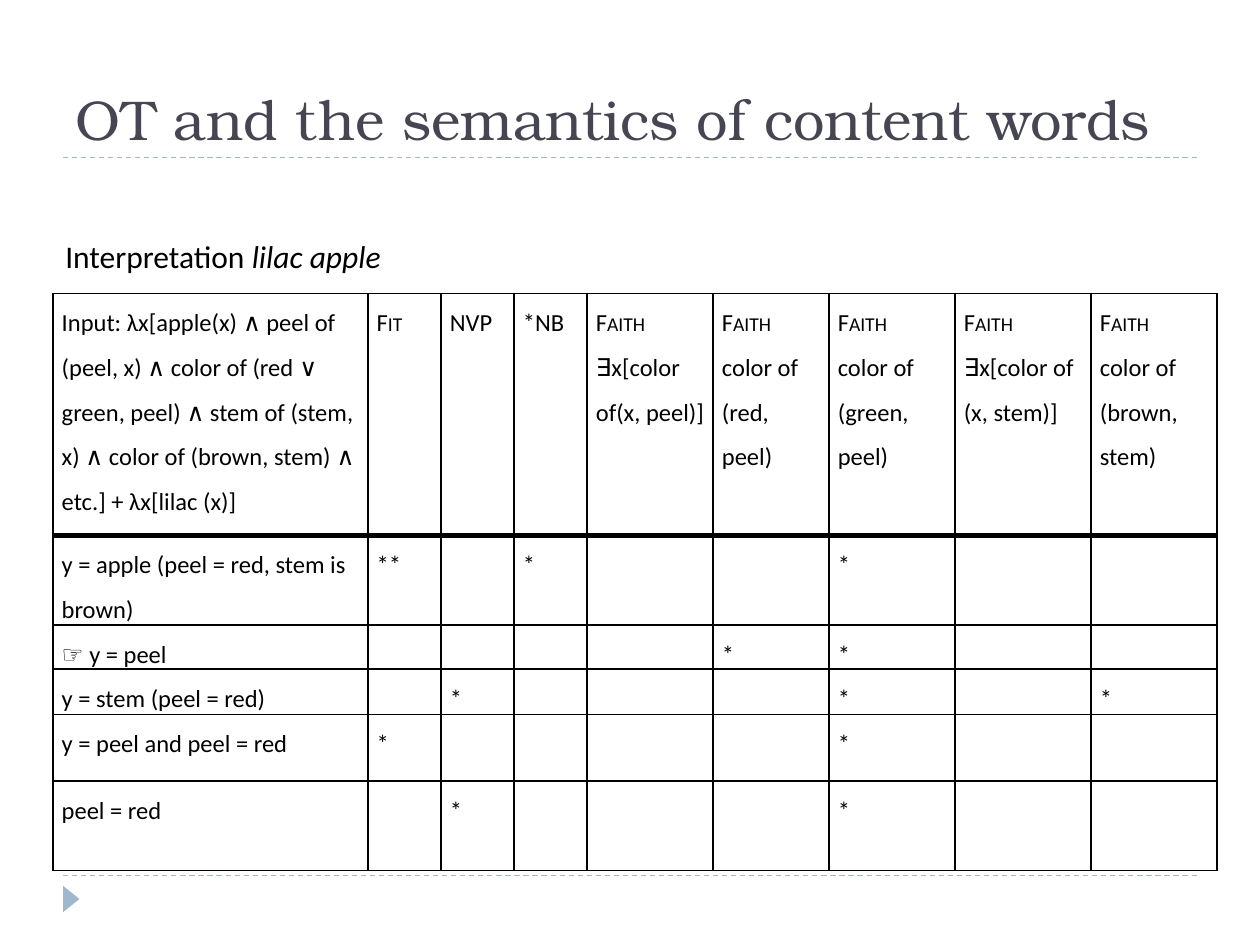
from lxml import etree
from pptx import Presentation
from pptx.dml.color import RGBColor
from pptx.enum import dml, shapes, text
from pptx.oxml.ns import qn
from pptx.util import Inches, Pt

BLACK, SLATE, BLUE = "000000", "464653", "9FB8CD"
BODY, HEADING = "Calibri", "TeX Gyre Bonum"
COLUMNS = [2.5, 0.58, 0.58, 0.58, 1, 0.92, 1, 1.08, 1]
ROWS = [1.92, 0.71, 0.35, 0.36, 0.53, 0.71]
INPUT = ("Input: λx[apple(x) ∧ peel of (peel, x) ∧ color of (red ∨ green, peel) "
         "∧ stem of (stem, x) ∧ color of (brown, stem) ∧ etc.] + λx[lilac (x)]")
HEADERS = [
    [[(INPUT, "")]],
    [[("Fit", "small")]],
    [[("NVP", "")]],
    [[("*NB", "")]],
    [[("Faith ", "small"), ("∃x[color of(x, peel)]", "")]],
    [[("Faith ", "small"), ("color of", "")], [("(red, peel)", "")]],
    [[("Faith", "small")], [("color of (green, peel)", "")]],
    [[("Faith", "small")], [("∃x[color of", "")], [("(x, stem)]", "")]],
    [[("Faith", "small")], [("color of (brown, stem)", "")]],
]
CANDIDATES = [
    ("y = apple (peel = red, stem is brown)", {1: "**", 3: "*", 6: "*"}),
    ("☞ y = peel", {5: "*", 6: "*"}),
    ("y = stem (peel = red)", {2: "*", 6: "*", 8: "*"}),
    ("y = peel and peel = red", {1: "*", 6: "*"}),
    ("peel = red", {2: "*", 6: "*"}),
]


def rgb(color):
    return RGBColor.from_string(color)


def add_run(p, words, size, font=BODY, color=BLACK, style=""):
    r = p.add_run()
    r.text = words
    r.font.size = Pt(size)
    r.font.name = font
    r.font.color.rgb = rgb(color)
    if style == "italic":
        r.font.italic = True
    elif style == "small":
        r._r.get_or_add_rPr().set("cap", "small")


def add_text(s, box, runs, size, font, color, anchor):
    tf = s.shapes.add_textbox(*map(Inches, box)).text_frame
    tf.word_wrap = True
    tf.vertical_anchor = anchor
    for words, style in runs:
        add_run(tf.paragraphs[0], words, size, font, color, style)


def add_rule(s, y):
    line = s.shapes.add_connector(shapes.MSO_CONNECTOR.STRAIGHT,
                                  Inches(0.5), Inches(y), Inches(9.5), Inches(y))
    line.line.color.rgb = rgb(BLUE)
    line.line.width = Pt(0.75)
    line.line.dash_style = dml.MSO_LINE.DASH
    etree.SubElement(line._element.spPr, qn("a:effectLst"))


def add_marker(s):
    sp = s.shapes.add_shape(shapes.MSO_SHAPE.ISOSCELES_TRIANGLE,
                            Inches(0.46), Inches(7.07), Inches(0.21), Inches(0.13))
    sp.rotation = 90
    sp.shadow.inherit = False
    sp.fill.solid()
    sp.fill.fore_color.rgb = rgb(BLUE)
    sp.line.fill.background()


def set_borders(cell, widths):
    tc_pr = cell._tc.get_or_add_tcPr()
    for i, (side, width) in enumerate(zip("LRTB", widths)):
        ln = etree.Element(qn(f"a:ln{side}"), w=str(Pt(width)))
        fill = etree.SubElement(ln, qn("a:solidFill"))
        etree.SubElement(fill, qn("a:srgbClr"), val=BLACK)
        tc_pr.insert(i, ln)


def fill_cell(cell, paragraphs, align=None):
    cell.fill.background()
    cell.margin_left = cell.margin_right = Inches(0.07)
    cell.margin_top = cell.margin_bottom = 0
    tf = cell.text_frame
    for i, runs in enumerate(paragraphs):
        p = tf.add_paragraph() if i else tf.paragraphs[0]
        p.line_spacing = 1.5
        p.alignment = align
        for words, style in runs:
            add_run(p, words, 14, style=style)


def add_tableau(s):
    frame = s.shapes.add_table(len(ROWS), len(COLUMNS), Inches(0.42), Inches(2.33),
                               Inches(sum(COLUMNS)), Inches(sum(ROWS)))
    table = frame.table
    table.first_row = table.horz_banding = False
    for column, width in zip(table.columns, COLUMNS):
        column.width = Inches(width)
    for row, height in zip(table.rows, ROWS):
        row.height = Inches(height)
    for c, paragraphs in enumerate(HEADERS):
        fill_cell(table.cell(0, c), paragraphs)
    for r, (candidate, marks) in enumerate(CANDIDATES, 1):
        fill_cell(table.cell(r, 0), [[(candidate, "")]])
        for c in range(1, len(COLUMNS)):
            paragraphs = [[(marks[c], "")]] if c in marks else []
            fill_cell(table.cell(r, c), paragraphs, text.PP_ALIGN.JUSTIFY)
    for r in range(len(ROWS)):
        for c in range(len(COLUMNS)):
            set_borders(table.cell(r, c),
                        (1, 1, 3 if r == 1 else 1, 3 if r == 0 else 1))


def main():
    prs = Presentation()
    prs.slide_width, prs.slide_height = Inches(10), Inches(7.5)
    s = prs.slides.add_slide(prs.slide_layouts[6])
    for y in (6.95, 1.25):
        add_rule(s, y)
    add_marker(s)
    add_text(s, (0.5, 0.17, 9, 1.08), [("OT and the semantics of content words", "")],
             32, HEADING, SLATE, text.MSO_ANCHOR.BOTTOM)
    add_tableau(s)
    add_text(s, (0.42, 1.83, 2.92, 0.4),
             [("Interpretation ", ""), ("lilac apple", "italic")],
             18, BODY, BLACK, text.MSO_ANCHOR.TOP)
    prs.save("out.pptx")


if __name__ == "__main__":
    main()
